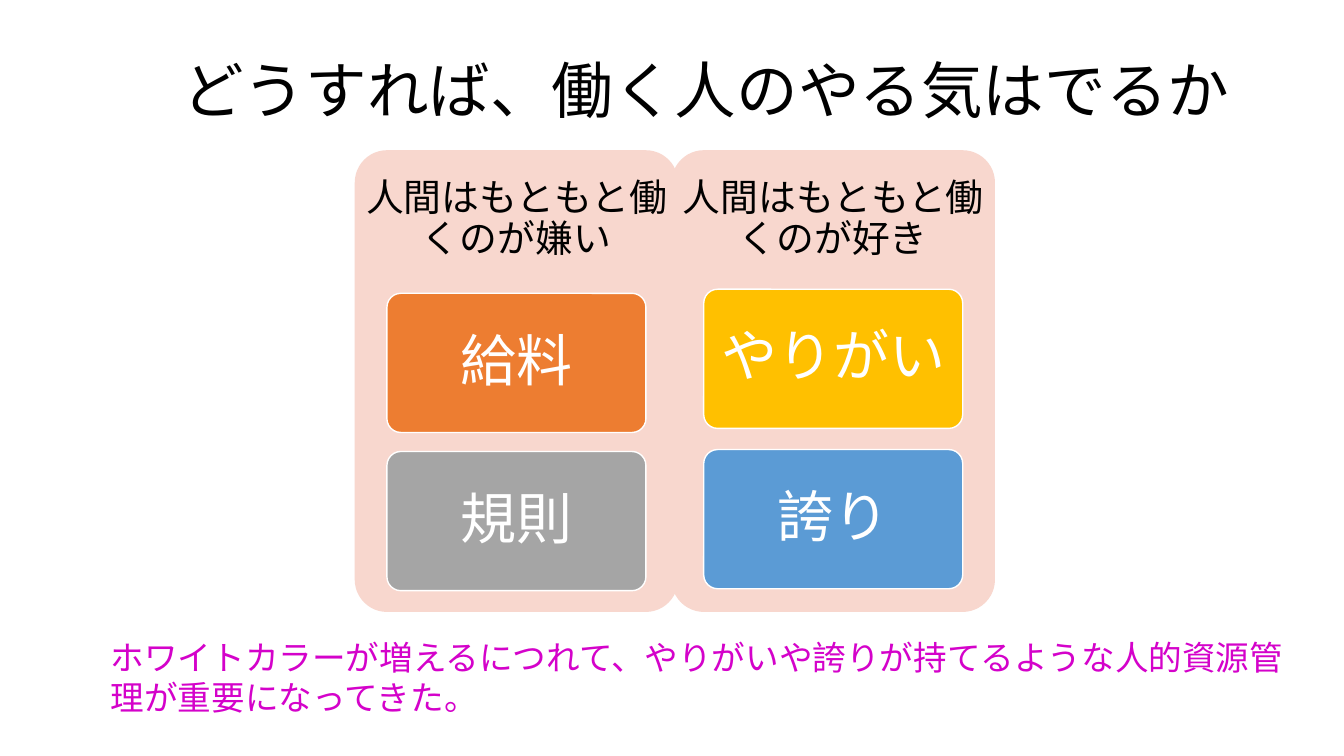
"""Build a slide contrasting two views of what motivates workers."""
from pptx import Presentation
from pptx.dml.color import RGBColor
from pptx.enum.shapes import MSO_SHAPE
from pptx.enum.text import MSO_ANCHOR, MSO_AUTO_SIZE, PP_ALIGN
from pptx.util import Pt

ROUNDED = MSO_SHAPE.ROUNDED_RECTANGLE
MIDDLE, TOP = MSO_ANCHOR.MIDDLE, MSO_ANCHOR.TOP
CENTER, LEFT = PP_ALIGN.CENTER, PP_ALIGN.LEFT
NO_FIT = MSO_AUTO_SIZE.NONE

FONT = "Calibri"
BLACK = RGBColor(0x00, 0x00, 0x00)
WHITE = RGBColor(0xFF, 0xFF, 0xFF)
PINK = RGBColor(0xF8, 0xD7, 0xCE)
ORANGE = RGBColor(0xED, 0x7D, 0x31)
GRAY = RGBColor(0xA5, 0xA5, 0xA5)
GOLD = RGBColor(0xFF, 0xC0, 0x00)
BLUE = RGBColor(0x5B, 0x9B, 0xD5)
MAGENTA = RGBColor(0xD4, 0x02, 0xCA)

TITLE = "どうすれば、働く人のやる気はでるか"
VIEWS = [
    {"heading": "人間はもともと働くのが嫌い", "first_top": 209.5, "pitch": 113,
     "motivators": [("給料", ORANGE), ("規則", GRAY)]},
    {"heading": "人間はもともと働くのが好き", "first_top": 206.6, "pitch": 114.5,
     "motivators": [("やりがい", GOLD), ("誇り", BLUE)]},
]
CONCLUSION = ("ホワイトカラーが増えるにつれて、やりがいや誇りが持てるような"
              "人的資源管理が重要になってきた。")

PANEL_LEFT, PANEL_TOP, PANEL_W, PANEL_H = 253.4, 107.3, 231, 329.8
PANEL_PITCH = 226.3
CARD_W, CARD_H = 185, 99.4
CARD_INSET = (PANEL_W - CARD_W) / 2


def write(shape, text, size, color, align=CENTER, anchor=MIDDLE,
          margins=(7.2, 3.6), spacing=0.9):
    frame = shape.text_frame
    frame.word_wrap = True
    frame.auto_size = NO_FIT
    frame.vertical_anchor = anchor
    frame.margin_left = frame.margin_right = Pt(margins[0])
    frame.margin_top = frame.margin_bottom = Pt(margins[1])
    paragraph = frame.paragraphs[0]
    paragraph.alignment = align
    paragraph.line_spacing = spacing
    run = paragraph.add_run()
    run.text = text
    run.font.name = FONT
    run.font.size = Pt(size)
    run.font.color.rgb = color


def add_box(slide, left, top, width, height, fill, outline=None):
    box = slide.shapes.add_shape(ROUNDED, Pt(left), Pt(top), Pt(width), Pt(height))
    box.adjustments[0] = 0.1
    box.shadow.inherit = False
    box.fill.solid()
    box.fill.fore_color.rgb = fill
    if outline is None:
        box.line.fill.background()
    else:
        box.line.color.rgb = outline
        box.line.width = Pt(1)
    return box


def add_view(slide, left, view):
    add_box(slide, left, PANEL_TOP, PANEL_W, PANEL_H, PINK)
    heading = slide.shapes.add_textbox(Pt(left), Pt(PANEL_TOP), Pt(PANEL_W), Pt(CARD_H))
    write(heading, view["heading"], 27, BLACK, margins=(8, 8))
    for row, (motivator, color) in enumerate(view["motivators"]):
        card = add_box(slide, left + CARD_INSET, view["first_top"] + row * view["pitch"],
                       CARD_W, CARD_H, color, WHITE)
        write(card, motivator, 40, WHITE, margins=(8, 6))


def main():
    deck = Presentation()
    deck.slide_width, deck.slide_height = Pt(960), Pt(540)
    slide = deck.slides.add_slide(deck.slide_layouts[5])

    title = slide.shapes.title
    title.left, title.top, title.width, title.height = Pt(123), Pt(27.4), Pt(788.4), Pt(79.2)
    write(title, TITLE, 44, BLACK, align=LEFT)

    for column, view in enumerate(VIEWS):
        add_view(slide, PANEL_LEFT + column * PANEL_PITCH, view)

    conclusion = slide.shapes.add_textbox(Pt(72), Pt(451.4), Pt(859), Pt(65.5))
    write(conclusion, CONCLUSION, 24, MAGENTA, align=LEFT, anchor=TOP, spacing=1.0)

    deck.save("out.pptx")


if __name__ == "__main__":
    main()
